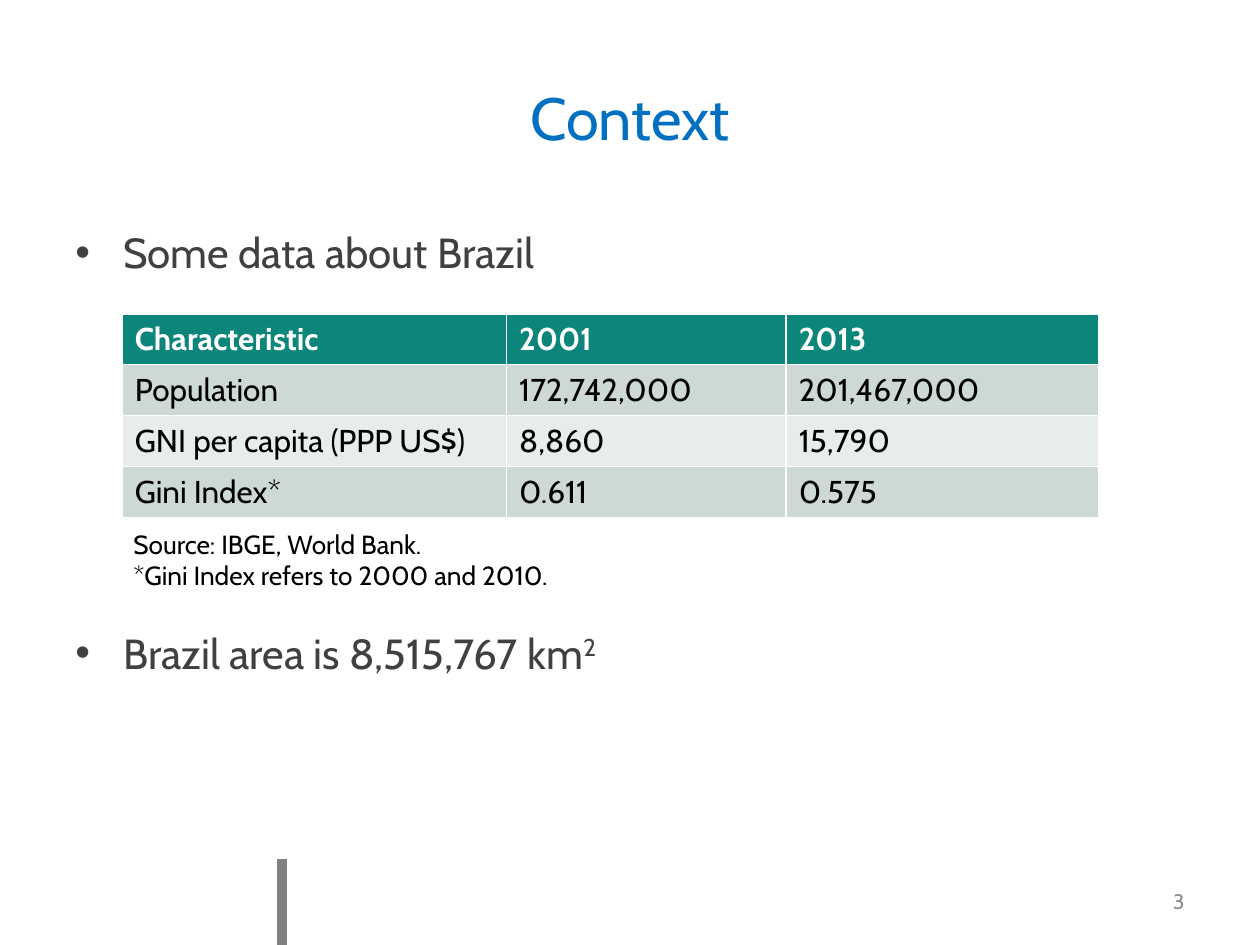
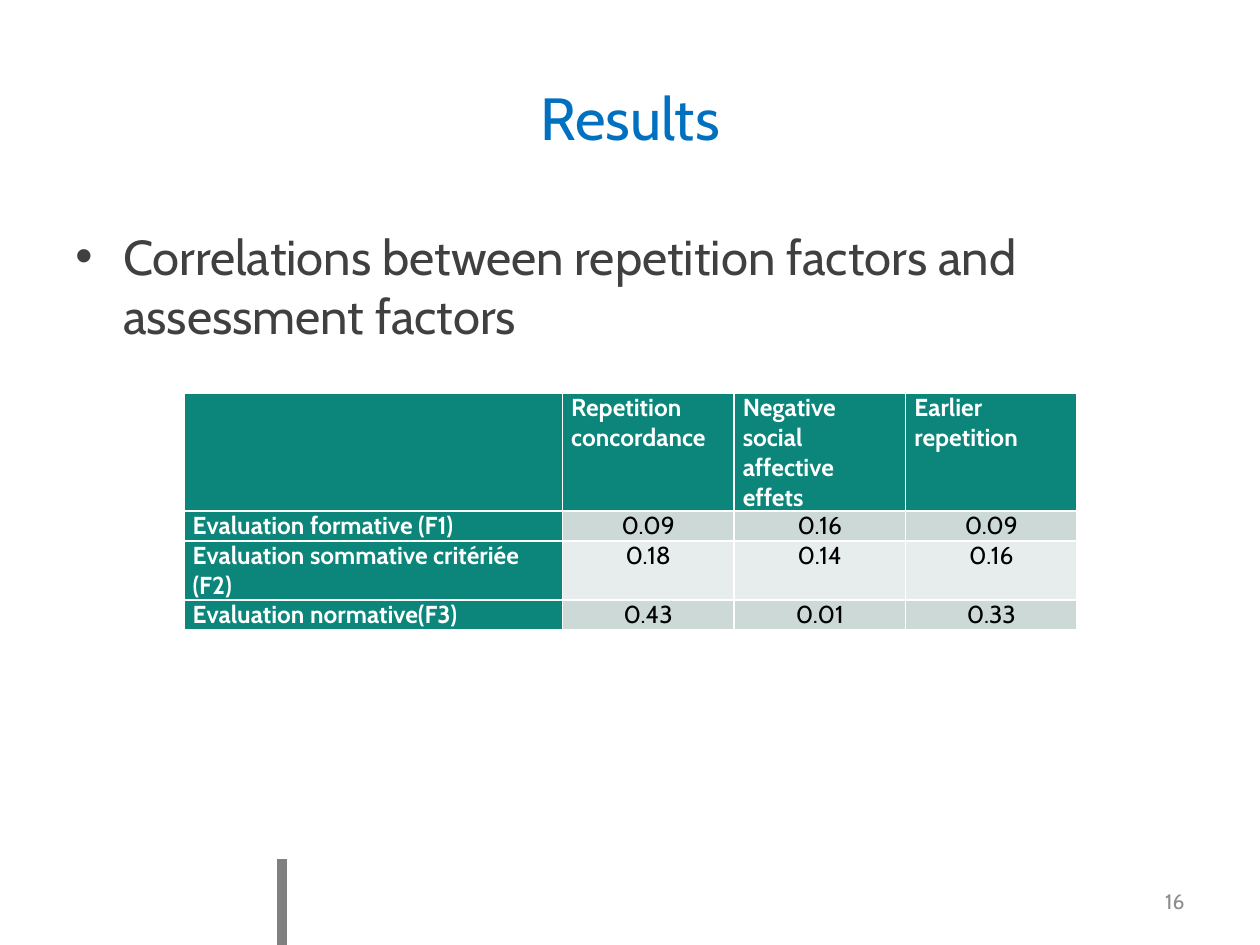
from collections import namedtuple
from dataclasses import dataclass

from lxml import etree
from pptx import Presentation
from pptx.dml.color import RGBColor
from pptx.enum.shapes import MSO_CONNECTOR
from pptx.enum.text import MSO_ANCHOR, PP_ALIGN
from pptx.oxml.ns import qn
from pptx.util import Inches, Pt

LEFT, MID, RIGHT, FULL = PP_ALIGN.LEFT, PP_ALIGN.CENTER, PP_ALIGN.RIGHT, PP_ALIGN.JUSTIFY
CENTRE = MSO_ANCHOR.MIDDLE
STRAIGHT = MSO_CONNECTOR.STRAIGHT
TITLE_ONLY = 5

WIDTH, HEIGHT = Inches(10), Inches(7.5)
Box = namedtuple("Box", "left top width height")


def share(left, top, width, height):
    """Box given in percent of the slide's width and height."""
    return Box(int(WIDTH * left / 100), int(HEIGHT * top / 100),
               int(WIDTH * width / 100), int(HEIGHT * height / 100))


@dataclass(frozen=True)
class Theme:
    font: str = "Cabin"
    title: str = "0070C0"
    body: str = "404040"
    grey: str = "8C8C8C"
    bar: str = "808080"
    head: str = "0C867A"
    bands: tuple = ("CCD9D7", "E7EDEC")
    white: str = "FFFFFF"
    black: str = "000000"
    title_size: int = 34
    large: int = 28
    medium: int = 24
    cell: int = 18
    note: int = 15
    small: int = 14
    number: int = 12


THEME = Theme()
TITLE = share(5, 4, 90, 16.67)
BODY = share(5, 23.33, 90, 66)
NUMBER = share(71.7, 92.67, 23.3, 5.33)
BAR = share(22.4, 90.93, 0, 9.07)


def paint(frame, size, color, bold=False, align=LEFT):
    for par in frame.paragraphs:
        par.alignment = align
        for run in par.runs:
            font = run.font
            font.name, font.size, font.bold = THEME.font, Pt(size), bold
            font.color.rgb = RGBColor.from_string(color)


def add_text(slide, box, text, size, color, align=LEFT):
    frame = slide.shapes.add_textbox(*box).text_frame
    frame.word_wrap = True
    frame.text = text
    paint(frame, size, color, align=align)
    return frame


def add_base(deck, title, number):
    """Slide with the parts that all slides share."""
    slide = deck.slides.add_slide(deck.slide_layouts[TITLE_ONLY])
    bar = slide.shapes.add_connector(
        STRAIGHT, BAR.left, BAR.top + BAR.height, BAR.left, BAR.top)
    bar.line.width = Pt(6)
    bar.line.color.rgb = RGBColor.from_string(THEME.bar)
    etree.SubElement(bar.line._get_or_add_ln().getparent(), qn("a:effectLst"))

    head = slide.shapes.title
    head.left, head.top, head.width, head.height = TITLE
    head.text_frame.text = title
    head.text_frame.vertical_anchor = CENTRE
    paint(head.text_frame, THEME.title_size, THEME.title, align=MID)

    frame = add_text(slide, NUMBER, number, THEME.number, THEME.grey, RIGHT)
    frame.vertical_anchor = CENTRE
    return slide


def add_points(slide, box, lines, size, gap=0):
    """Bulleted lines, with gap points between them."""
    frame = add_text(slide, box, "\n".join(lines), size, THEME.body)
    for index, par in enumerate(frame.paragraphs):
        props = par._p.get_or_add_pPr()
        props.set("marL", str(Inches(0.38)))
        props.set("indent", str(-Inches(0.38)))
        font = etree.SubElement(props, qn("a:buFont"))
        font.set("typeface", "Arial")
        etree.SubElement(props, qn("a:buChar")).set("char", "•")
        if index:
            par.space_before = Pt(gap)
    return frame


def add_grid(slide, box, rows, cols, heights, size, inset=None,
             side=False, aligns=(LEFT, LEFT)):
    """Table split by relative cols and heights; side marks a header column.

    The two aligns are for the header row and for the values.
    """
    table = slide.shapes.add_table(len(rows), len(cols), *box).table
    table.first_col = side
    for col, part in zip(table.columns, cols):
        col.width = int(box.width * part / sum(cols))
    for row, part in zip(table.rows, heights):
        row.height = int(box.height * part / sum(heights))
    for r, row in enumerate(rows):
        for c, text in enumerate(row):
            cell = table.cell(r, c)
            head = r == 0 or (side and c == 0)
            fill = THEME.head if head else THEME.bands[(r - 1) % 2]
            cell.fill.solid()
            cell.fill.fore_color.rgb = RGBColor.from_string(fill)
            if inset is not None:
                cell.margin_left = cell.margin_right = inset
                cell.margin_top = cell.margin_bottom = 0
            cell.text_frame.text = text
            align = aligns[0] if r == 0 else LEFT if c == 0 else aligns[1]
            paint(cell.text_frame, size,
                  THEME.white if head else THEME.black, head, align)


def add_context(deck):
    slide = add_base(deck, "Context", "3")
    frame = add_points(
        slide, BODY, ["Some data about Brazil", "Brazil area is 8,515,767 km"],
        THEME.medium, gap=200)
    power = frame.paragraphs[1].add_run()
    power.text = "2"
    paint(frame, THEME.medium, THEME.body)
    power.font._element.set("baseline", "30000")

    rows = [
        ("Characteristic", "2001", "2013"),
        ("Population", "172,742,000", "201,467,000"),
        ("GNI per capita (PPP US$)", "8,860", "15,790"),
        ("Gini Index*", "0.611", "0.575"),
    ]
    add_grid(slide, share(9.7, 33.2, 77.5, 21.6), rows,
             (3.05, 2.22, 2.48), (1, 1, 1, 1), THEME.cell)
    add_text(slide, share(9.6, 55.2, 36, 8.13),
             "Source: IBGE, World Bank.\n*Gini Index refers to 2000 and 2010.",
             THEME.note, THEME.black)


def add_results(deck):
    slide = add_base(deck, "Results", "16")
    add_points(
        slide, BODY,
        ["Correlations between repetition factors and assessment factors"],
        THEME.large)
    rows = [
        ("", "Repetition concordance", "Negative social affective effets",
         "Earlier repetition"),
        ("Evaluation formative (F1)", "0.09", "0.16", "0.09"),
        ("Evaluation sommative critériée (F2)", "0.18", "0.14", "0.16"),
        ("Evaluation normative(F3)", "0.43", "0.01", "0.33"),
    ]
    add_grid(slide, share(14.6, 41.6, 70.9, 25), rows,
             (3, 1.36, 1.36, 1.36), (4, 1, 2, 1), THEME.small,
             inset=Inches(0.07), side=True, aligns=(FULL, MID))


def main():
    deck = Presentation()
    deck.slide_width, deck.slide_height = WIDTH, HEIGHT
    add_context(deck)
    add_results(deck)
    deck.save("out.pptx")


if __name__ == "__main__":
    main()
